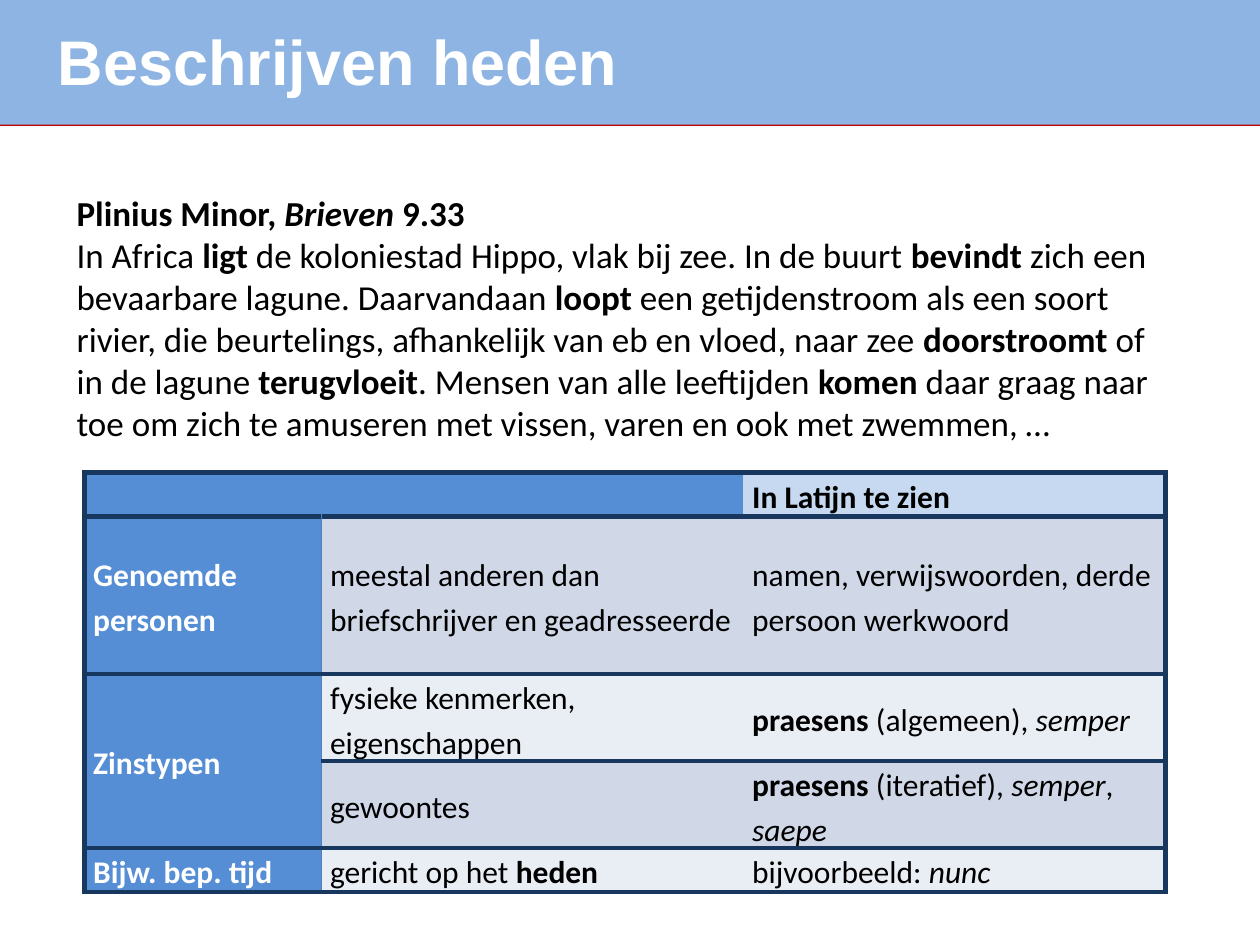
from dataclasses import dataclass
from typing import Optional

from lxml import etree
from pptx import Presentation
from pptx import util as u
from pptx.dml.color import RGBColor
from pptx.enum import shapes, text
from pptx.oxml import ns

WIDTH, HEIGHT = u.Inches(10), u.Inches(7.5)

WHITE = RGBColor(0xFF, 0xFF, 0xFF)
BLACK = RGBColor(0, 0, 0)
RED = RGBColor(0xC0, 0, 0)
BANNER_BLUE = RGBColor(0x8E, 0xB4, 0xE3)
LABEL_BLUE = RGBColor(0x55, 0x8E, 0xD5)
HEADER_BLUE = RGBColor(0xC6, 0xD9, 0xF1)
DARK_BAND = RGBColor(0xD0, 0xD8, 0xE8)
LIGHT_BAND = RGBColor(0xE9, 0xED, 0xF4)
FRAME_BLUE = RGBColor(0x17, 0x37, 0x5E)
RULE_BLUE = RGBColor(0x4F, 0x81, 0xBD)


@dataclass(frozen=True)
class Run:
    text: str
    bold: bool = False
    italic: bool = False


@dataclass(frozen=True)
class Style:
    size: int
    color: RGBColor = BLACK
    font: str = "Calibri"


@dataclass(frozen=True)
class Box:
    """Left, top, width and height as shares of the slide."""
    left: float
    top: float
    width: float
    height: float

    def emu(self) -> tuple:
        return (u.Emu(int(self.left * WIDTH)), u.Emu(int(self.top * HEIGHT)),
                u.Emu(int(self.width * WIDTH)), u.Emu(int(self.height * HEIGHT)))


@dataclass(frozen=True)
class Entry:
    row: int
    column: int
    fill: RGBColor
    runs: tuple = ()
    color: RGBColor = BLACK
    row_span: int = 1
    column_span: int = 1


BANNER = Box(0, 0, 1, 0.132)
TITLE = Box(0.036, 0.017, 0.913, 0.095)
PASSAGE = Box(0.051, 0.196, 0.874, 0.283)
TABLE = Box(0.067, 0.5, 0.858, 0.444)
COLUMNS = (1.88, 3.35, 3.35)
ROWS = (0.35, 1.25, 0.69, 0.69, 0.35)

PASSAGE_TEXT = (
    (Run("Plinius Minor, ", bold=True), Run("Brieven ", bold=True, italic=True),
     Run("9.33", bold=True)),
    (Run("In Africa "), Run("ligt", bold=True),
     Run(" de koloniestad Hippo, vlak bij zee. In de buurt "), Run("bevindt", bold=True),
     Run(" zich een bevaarbare lagune. Daarvandaan "), Run("loopt", bold=True),
     Run(" een getijdenstroom als een soort rivier, die beurtelings, "
         "afhankelijk van eb en vloed, naar zee "), Run("doorstroomt", bold=True),
     Run(" of in de lagune "), Run("terugvloeit", bold=True),
     Run(". Mensen van alle leeftijden "), Run("komen", bold=True),
     Run(" daar graag naar toe om zich te amuseren met vissen, varen "
         "en ook met zwemmen, …")),
)


def label(row: int, words: str, row_span: int = 1) -> Entry:
    return Entry(row, 0, LABEL_BLUE, (Run(words, bold=True),), WHITE, row_span)


def body(row: int, column: int, *runs: Run) -> Entry:
    return Entry(row, column, DARK_BAND if row % 2 else LIGHT_BAND, runs)


ENTRIES = (
    Entry(0, 0, LABEL_BLUE, column_span=2),
    Entry(0, 2, HEADER_BLUE, (Run("In Latijn te zien", bold=True),)),
    label(1, "Genoemde personen"),
    body(1, 1, Run("meestal anderen dan briefschrijver en geadresseerde")),
    body(1, 2, Run("namen, verwijswoorden, derde persoon werkwoord")),
    label(2, "Zinstypen", row_span=2),
    body(2, 1, Run("fysieke kenmerken, eigenschappen")),
    body(2, 2, Run("praesens", bold=True), Run(" (algemeen), "), Run("semper", italic=True)),
    body(3, 1, Run("gewoontes")),
    body(3, 2, Run("praesens", bold=True), Run(" (iteratief), "), Run("semper", italic=True),
         Run(", "), Run("saepe", italic=True)),
    label(4, "Bijw. bep. tijd"),
    body(4, 1, Run("gericht op het "), Run("heden", bold=True)),
    body(4, 2, Run("bijvoorbeeld: "), Run("nunc", italic=True)),
)


def add_runs(paragraph, runs: tuple, style: Style) -> None:
    for item in runs:
        run = paragraph.add_run()
        run.text = item.text
        run.font.name, run.font.size = style.font, u.Pt(style.size)
        run.font.bold, run.font.italic = item.bold, item.italic
        run.font.color.rgb = style.color


def add_text(slide, box: Box, paragraphs: tuple, style: Style) -> None:
    frame = slide.shapes.add_textbox(*box.emu()).text_frame
    frame.word_wrap = True
    for index, runs in enumerate(paragraphs):
        paragraph = frame.add_paragraph() if index else frame.paragraphs[0]
        add_runs(paragraph, runs, style)


def add_banner(slide) -> None:
    left, top, width, height = BANNER.emu()
    line = slide.shapes.add_connector(
        shapes.MSO_CONNECTOR.STRAIGHT, left, height, width, height)
    line.line.color.rgb = RED
    line.line.width = u.Pt(2)
    etree.SubElement(line._element.spPr, ns.qn("a:effectLst"))
    shape = slide.shapes.add_shape(
        shapes.MSO_SHAPE.RECTANGLE, left, top, width, height)
    shape.shadow.inherit = False
    shape.fill.solid()
    shape.fill.fore_color.rgb = BANNER_BLUE
    shape.line.fill.background()


def add_border(cell, side: str, color: Optional[RGBColor], points: int) -> None:
    properties = cell._tc.get_or_add_tcPr()
    line = etree.SubElement(properties, ns.qn(f"a:ln{side}"), w=str(u.Pt(points)))
    if color is None:
        etree.SubElement(line, ns.qn("a:noFill"))
    else:
        fill = etree.SubElement(line, ns.qn("a:solidFill"))
        etree.SubElement(fill, ns.qn("a:srgbClr"), val=str(color))


def frame_cell(cell, row: int, column: int) -> None:
    """Heavy rows and outer frame, a thin rule after the label column."""
    heavy, thin, bare = (FRAME_BLUE, 3), (RULE_BLUE, 1), (None, 1)
    verticals = (heavy, thin if row else bare, bare, heavy)
    add_border(cell, "L", *verticals[column])
    add_border(cell, "R", *verticals[column + 1])
    add_border(cell, "T", *heavy)
    add_border(cell, "B", *heavy)


def add_grid(slide) -> None:
    table = slide.shapes.add_table(len(ROWS), len(COLUMNS), *TABLE.emu()).table
    for column, width in zip(table.columns, COLUMNS):
        column.width = u.Inches(width)
    for row, height in zip(table.rows, ROWS):
        row.height = u.Inches(height)
    for row in range(len(ROWS)):
        for column in range(len(COLUMNS)):
            frame_cell(table.cell(row, column), row, column)
    for entry in ENTRIES:
        cell = table.cell(entry.row, entry.column)
        if entry.row_span * entry.column_span > 1:
            cell.merge(table.cell(entry.row + entry.row_span - 1,
                                  entry.column + entry.column_span - 1))
        cell.fill.solid()
        cell.fill.fore_color.rgb = entry.fill
        cell.margin_left = cell.margin_right = u.Inches(0.07)
        cell.margin_top = cell.margin_bottom = 0
        cell.vertical_anchor = text.MSO_ANCHOR.MIDDLE
        paragraph = cell.text_frame.paragraphs[0]
        paragraph.line_spacing = 1.15
        add_runs(paragraph, entry.runs, Style(18, entry.color))


def main() -> None:
    presentation = Presentation()
    presentation.slide_width, presentation.slide_height = WIDTH, HEIGHT
    slide = presentation.slides.add_slide(presentation.slide_layouts[6])
    add_banner(slide)
    add_text(slide, TITLE, ((Run("Beschrijven heden", bold=True),),),
             Style(36, WHITE, "Arial"))
    add_text(slide, PASSAGE, PASSAGE_TEXT, Style(20))
    add_grid(slide)
    presentation.save("out.pptx")


if __name__ == "__main__":
    main()
